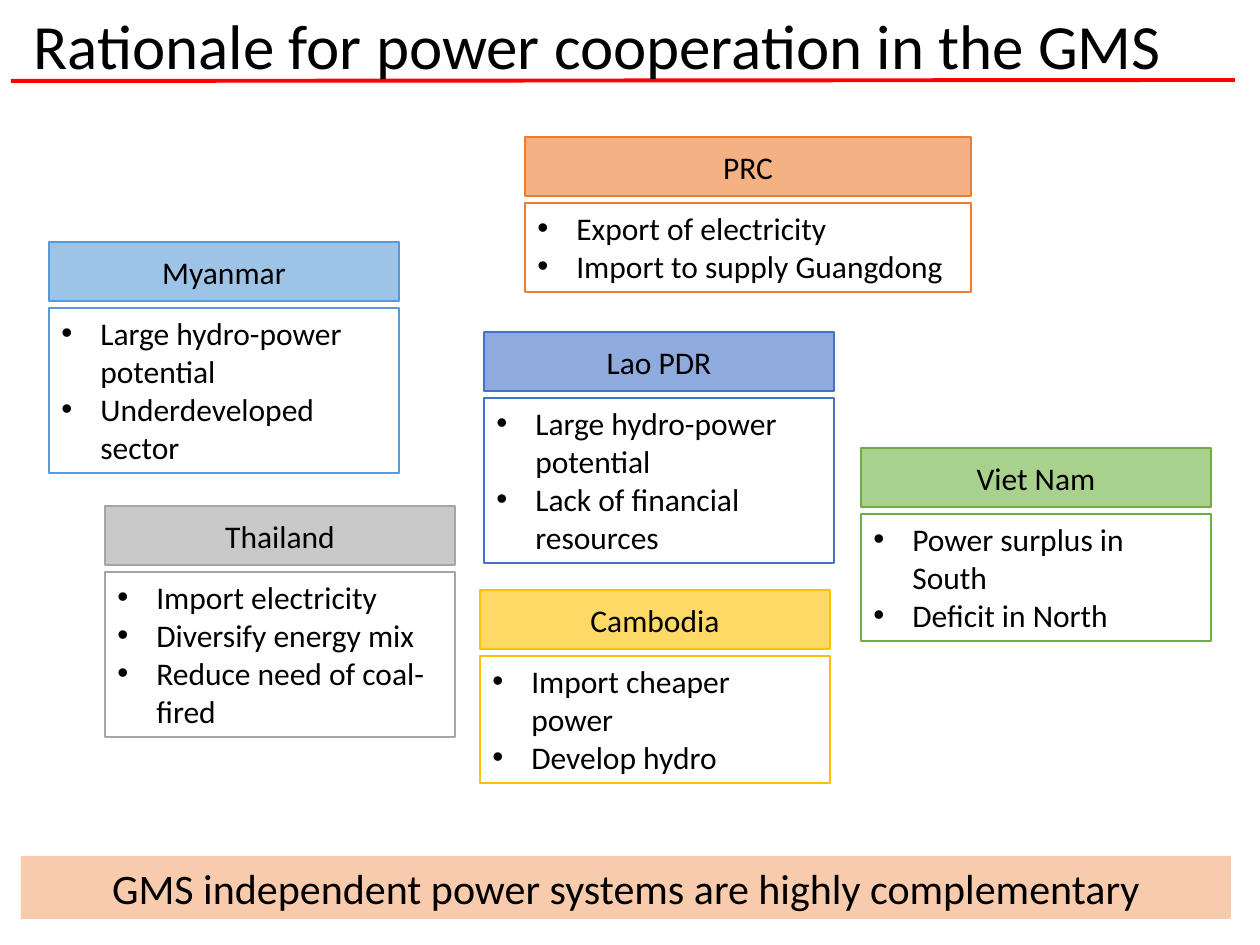
from lxml import etree
from pptx import Presentation
from pptx.dml.color import RGBColor
from pptx.enum.shapes import MSO_CONNECTOR, MSO_SHAPE
from pptx.enum.text import MSO_ANCHOR, MSO_AUTO_SIZE, PP_ALIGN
from pptx.oxml.ns import qn
from pptx.util import Pt

LEFT, CENTER = PP_ALIGN.LEFT, PP_ALIGN.CENTER
TOP, MIDDLE = MSO_ANCHOR.TOP, MSO_ANCHOR.MIDDLE
NO_FIT = MSO_AUTO_SIZE.NONE
RECT, STRAIGHT = MSO_SHAPE.RECTANGLE, MSO_CONNECTOR.STRAIGHT

FONT = "Calibri"
DPI = 126
HEAD_H, BODY_OFFSET, LINE_H, BODY_PAD = 59, 66, 38, 13
COLORS = {
    "text": "000000", "rule": "FF0000", "banner": "F8CBAD",
    "gold": "FFC000", "gold_light": "FFD966",
    "gray": "A5A5A5", "gray_light": "C9C9C9",
    "blue": "4472C4", "blue_light": "8FAADC",
    "sky": "5B9BD5", "sky_light": "9DC3E6",
    "green": "70AD47", "green_light": "A9D18E",
    "orange": "ED7D31", "orange_light": "F4B183",
}
COUNTRIES = [
    ("Cambodia", "gold", 480, 590, 350, 3,
     ["Import cheaper power", "Develop hydro"]),
    ("Thailand", "gray", 105, 506, 350, 4,
     ["Import electricity", "Diversify energy mix", "Reduce need of coal-fired"]),
    ("Lao PDR", "blue", 484, 332, 350, 4,
     ["Large hydro-power potential", "Lack of financial resources"]),
    ("Myanmar", "sky", 49, 242, 350, 4,
     ["Large hydro-power potential", "Underdeveloped sector"]),
    ("Viet Nam", "green", 861, 448, 350, 3,
     ["Power surplus in South", "Deficit in North"]),
    ("PRC", "orange", 525, 137, 446, 2,
     ["Export of electricity", "Import to supply Guangdong"]),
]


def px(n):
    """Turn pixels into EMU."""
    return round(n * 914400 / DPI)


def color(name):
    """Look up a named colour."""
    return RGBColor.from_string(COLORS[name])


def add_bullet(p):
    """Give a paragraph a hanging round bullet."""
    pPr = p._p.get_or_add_pPr()
    pPr.set("marL", str(px(39)))
    pPr.set("indent", str(px(-39)))
    etree.SubElement(pPr, qn("a:buFont"), typeface="Arial")
    etree.SubElement(pPr, qn("a:buChar"), char="•")


def write(sp, lines, size=18, align=CENTER, anchor=MIDDLE, bullets=False, spacing=None):
    """Fill a shape with formatted paragraphs."""
    tf = sp.text_frame
    tf.word_wrap = True
    tf.auto_size = NO_FIT
    tf.vertical_anchor = anchor
    for i, line in enumerate(lines):
        p = tf.add_paragraph() if i else tf.paragraphs[0]
        p.alignment = align
        if spacing:
            p.line_spacing = spacing
        if bullets:
            add_bullet(p)
        r = p.add_run()
        r.text = line
        r.font.name = FONT
        r.font.size = Pt(size)
        r.font.color.rgb = color("text")


def add_box(s, x, y, w, h, fill=None, line=None, width=1):
    """Add a flat rectangle with optional fill and outline."""
    sp = s.shapes.add_shape(RECT, px(x), px(y), px(w), px(h))
    sp.shadow.inherit = False
    if fill:
        sp.fill.solid()
        sp.fill.fore_color.rgb = color(fill)
    else:
        sp.fill.background()
    if line:
        sp.line.color.rgb = color(line)
        sp.line.width = Pt(width)
    else:
        sp.line.fill.background()
    return sp


def add_title(s, text):
    """Place the title with the red rule behind it."""
    title = s.shapes.title
    title.left, title.top, title.width, title.height = map(px, (21, 9, 1163, 80))
    write(title, [text], size=36, align=LEFT, spacing=0.9)
    rule = s.shapes.add_connector(STRAIGHT, px(11), px(81), px(1235), px(80))
    rule.line.color.rgb = color("rule")
    rule.line.width = Pt(2.25)
    etree.SubElement(rule.element.spPr, qn("a:effectLst"))
    title.element.addprevious(rule.element)


def add_country(s, name, hue, x, y, w, rows, points):
    """Add a country heading with its bulleted box below."""
    head = add_box(s, x, y, w, HEAD_H, fill=f"{hue}_light", line=hue)
    write(head, [name])
    body = add_box(s, x, y + BODY_OFFSET, w, BODY_PAD + rows * LINE_H, line=hue, width=0.75)
    write(body, points, align=LEFT, anchor=TOP, bullets=True)


def main():
    """Build and save the slide."""
    prs = Presentation()
    prs.slide_width, prs.slide_height = px(1260), px(945)
    s = prs.slides.add_slide(prs.slide_layouts[5])
    add_title(s, "Rationale for power cooperation in the GMS")
    banner = add_box(s, 21, 856, 1210, 63, fill="banner")
    write(banner, ["GMS independent power systems are highly complementary"], size=24, anchor=TOP)
    for country in COUNTRIES:
        add_country(s, *country)
    prs.save("out.pptx")


if __name__ == "__main__":
    main()
